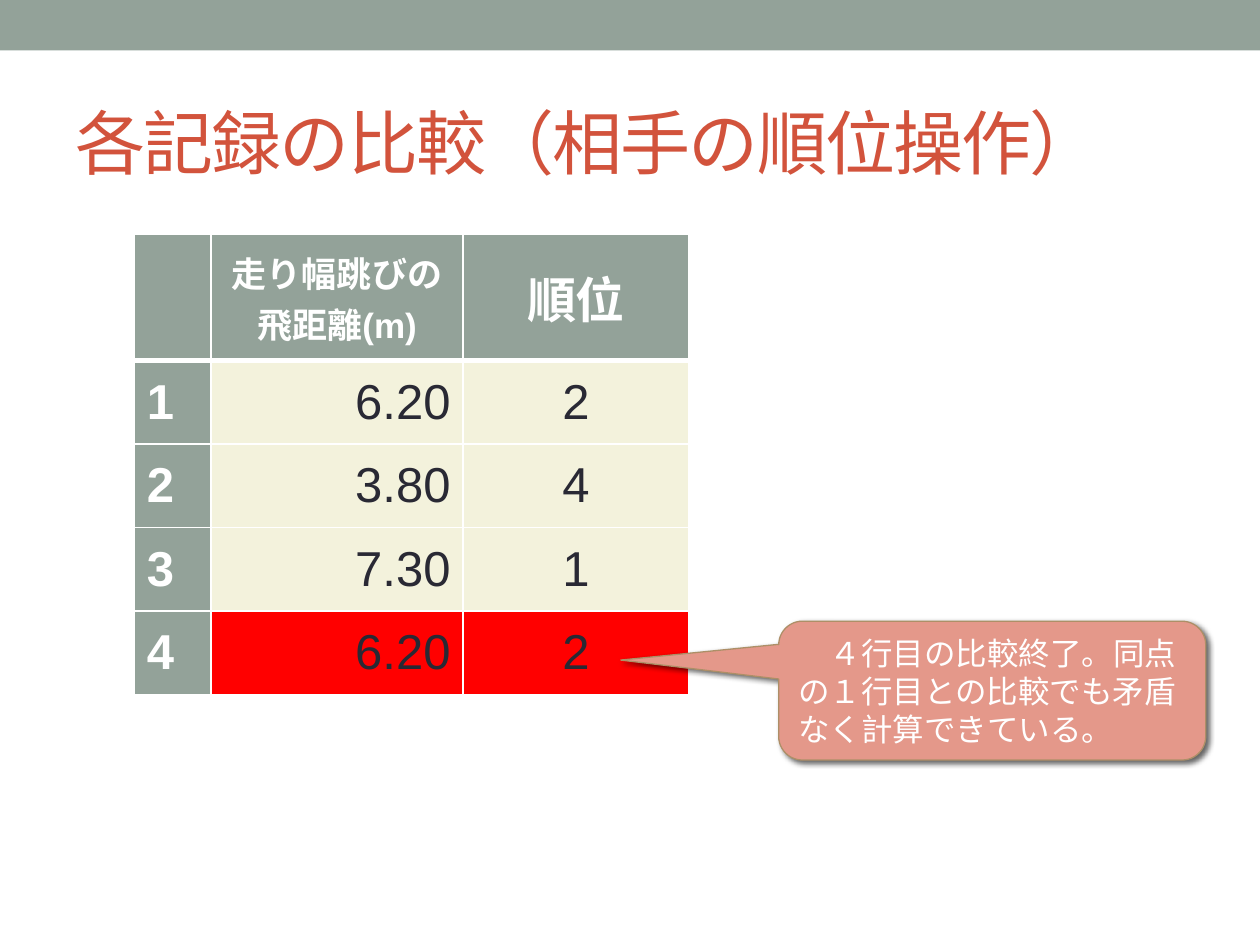
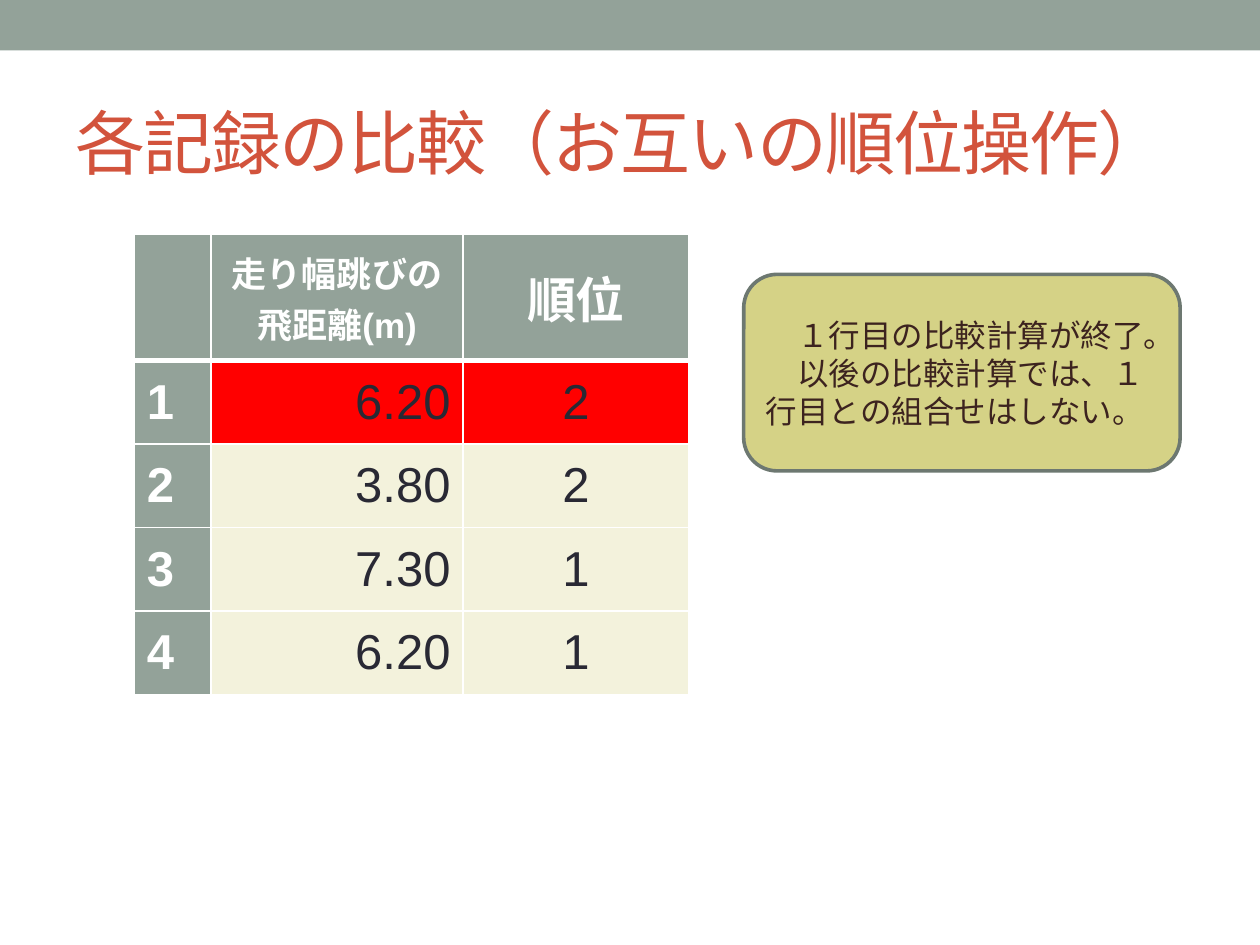
from pptx import Presentation
from pptx.dml.color import RGBColor
from pptx.enum.shapes import MSO_SHAPE as Shape
from pptx.enum.text import MSO_ANCHOR as Anchor, PP_ALIGN as Align
from pptx.oxml import parse_xml
from pptx.oxml.ns import nsdecls
from pptx.util import Pt

SAGE = RGBColor(0x93, 0xA2, 0x99)
CREAM = RGBColor(0xF3, 0xF2, 0xDC)
RED = RGBColor(0xFF, 0x00, 0x00)
WHITE = RGBColor(0xFF, 0xFF, 0xFF)
INK = RGBColor(0x29, 0x29, 0x34)
BRICK = RGBColor(0xD2, 0x53, 0x3C)
SALMON = RGBColor(0xE4, 0x98, 0x8A)
TAN = RGBColor(0xAD, 0x8F, 0x67)
OLIVE = RGBColor(0xD5, 0xD2, 0x86)
SLATE = RGBColor(0x6D, 0x78, 0x71)
BROWN = RGBColor(0x3C, 0x23, 0x1F)

HEADINGS = ["", "走り幅跳びの\n飛距離(m)", "順位"]
DISTANCES = ["6.20", "3.80", "7.30", "6.20"]
COLUMN_WIDTHS = [43.9, 144, 129.1]
ROW_HEIGHTS = [72] + [47.75] * 4
COLUMN_ALIGNS = [Align.LEFT, Align.RIGHT, Align.CENTER]

SLIDES = [
    dict(title="各記録の比較（相手の順位操作）", ranks=["2", "4", "1", "2"], current=4,
         note=["　４行目の比較終了。同点の１行目との比較でも矛盾なく計算できている。"],
         kind=Shape.ROUNDED_RECTANGULAR_CALLOUT, place=(445, 355, 244, 79.3),
         adjust=[-0.87, -0.22, 0.17], fill=SALMON, line=TAN, weight=0.75,
         color=WHITE, shadow=True),
    dict(title="各記録の比較（お互いの順位操作）", ranks=["2", "2", "1", "1"], current=1,
         note=["　１行目の比較計算が終了。", "　以後の比較計算では、１行目との組合せはしない。"],
         kind=Shape.ROUNDED_RECTANGLE, place=(425, 156.8, 249.4, 112.3),
         adjust=[0.17], fill=OLIVE, line=SLATE, weight=2.08,
         color=BROWN, shadow=False),
]


def write(frame, text, size, color, align, bold=False):
    frame.text = text
    frame.word_wrap = True
    for para in frame.paragraphs:
        para.alignment = align
        for span in para.runs:
            span.font.name = "Arial"
            span.font.size = Pt(size)
            span.font.bold = bold
            span.font.color.rgb = color


def add_border(cell, side, weight):
    cell._tc.get_or_add_tcPr().append(parse_xml(
        f'<a:{side} {nsdecls("a")} w="{Pt(weight)}"><a:solidFill>'
        f'<a:srgbClr val="{WHITE}"/></a:solidFill></a:{side}>'))


deck = Presentation()
deck.slide_width, deck.slide_height = Pt(720), Pt(540)

for content in SLIDES:
    page = deck.slides.add_slide(deck.slide_layouts[6])

    band = page.shapes.add_shape(Shape.RECTANGLE, 0, 0, deck.slide_width, Pt(28.8))
    band.shadow.inherit = False
    band.fill.solid()
    band.fill.fore_color.rgb = SAGE
    band.line.fill.background()

    table = page.shapes.add_table(5, 3, Pt(76.7), Pt(134), Pt(317), Pt(263)).table
    for column, width in zip(table.columns, COLUMN_WIDTHS):
        column.width = Pt(width)
    for row, height in zip(table.rows, ROW_HEIGHTS):
        row.height = Pt(height)

    records = [HEADINGS]
    for number, record in enumerate(zip(DISTANCES, content["ranks"]), 1):
        records.append([str(number), *record])
    for r, record in enumerate(records):
        for c, text in enumerate(record):
            cell = table.cell(r, c)
            heading = r == 0 or c == 0
            cell.vertical_anchor = Anchor.MIDDLE
            for side in ("lnL", "lnR", "lnT", "lnB"):
                thick = (r, side) in ((0, "lnB"), (1, "lnT"))
                add_border(cell, side, 3 if thick else 1)
            cell.fill.solid()
            cell.fill.fore_color.rgb = (
                SAGE if heading else RED if r == content["current"] else CREAM)
            write(cell.text_frame, text, 20 if (r, c) == (0, 1) else 28,
                  WHITE if heading else INK,
                  Align.CENTER if r == 0 else COLUMN_ALIGNS[c], heading)

    title = page.shapes.add_textbox(Pt(36), Pt(42), Pt(648), Pt(78))
    title.text_frame.vertical_anchor = Anchor.MIDDLE
    write(title.text_frame, content["title"], 40, BRICK, Align.LEFT)
    title.text_frame.paragraphs[0].runs[0]._r.get_or_add_rPr().set("spc", "-100")

    note = page.shapes.add_shape(content["kind"], *map(Pt, content["place"]))
    for index, value in enumerate(content["adjust"]):
        note.adjustments[index] = value
    note.fill.solid()
    note.fill.fore_color.rgb = content["fill"]
    note.line.color.rgb = content["line"]
    note.line.width = Pt(content["weight"])
    note.shadow.inherit = False
    if content["shadow"]:
        effects = note._element.spPr.find(
            "{http://schemas.openxmlformats.org/drawingml/2006/main}effectLst")
        effects.append(parse_xml(
            f'<a:outerShdw {nsdecls("a")} blurRad="{Pt(3)}" dist="{Pt(2)}" dir="2700000">'
            '<a:srgbClr val="000000"><a:alpha val="60000"/></a:srgbClr></a:outerShdw>'))
    note.text_frame.vertical_anchor = Anchor.MIDDLE
    write(note.text_frame, "\n".join(content["note"]), 18, content["color"], Align.LEFT)
    for para in note.text_frame.paragraphs:
        para.line_spacing = Pt(21.6)

deck.save("out.pptx")
